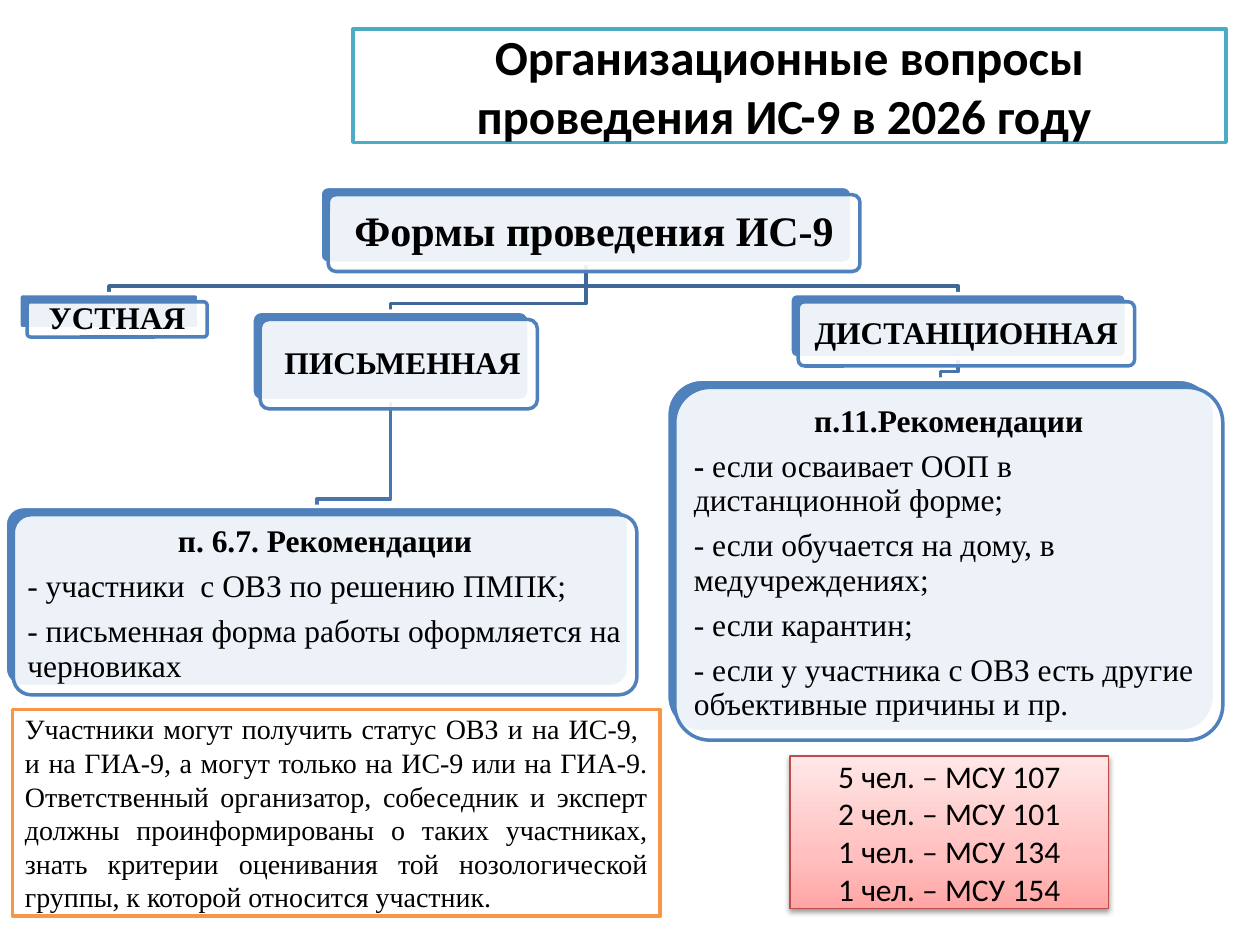
"""Build the slide on the forms of the interview and its organisation."""
from copy import deepcopy

from lxml import etree
from pptx import Presentation
from pptx.dml.color import RGBColor
from pptx.enum import shapes, text
from pptx.oxml import ns
from pptx.util import Inches, Pt

COLORS = {
    "white": "FFFFFF", "black": "000000", "blue": "4F81BD", "teal": "4BACC6",
    "orange": "F79646", "red": "BF4C48", "upper link": "3F6797", "lower link": "4875AC",
}
GRADIENT = [(0, "FFA6A5"), (0.35, "FFC0BF"), (1, "FFE7E7")]
SERIF, SANS = "Times New Roman", "Calibri"
CENTER, LEFT, JUSTIFY = text.PP_ALIGN.CENTER, text.PP_ALIGN.LEFT, text.PP_ALIGN.JUSTIFY
CARD_SHIFT = 0.065
BEND_HEIGHT = 0.06

TITLE = "Организационные вопросы проведения ИС-9 в 2026 году "
CARDS = {
    "forms": ((2.54, 1.48, 4.22, 0.61), "Формы проведения ИС-9", []),
    "oral": ((0.15, 2.33, 1.43, 0.28), "УСТНАЯ", []),
    "written": ((2, 2.47, 2.2, 0.71), " ПИСЬМЕННАЯ", []),
    "written rules": ((0.04, 4.02, 4.95, 1.43), "п. 6.7. Рекомендации", [
        "- участники  с ОВЗ по решению ПМПК;",
        "- письменная форма работы оформляется на черновиках",
    ]),
    "remote": ((6.27, 2.33, 2.67, 0.51), "ДИСТАНЦИОННАЯ", []),
    "remote rules": ((5.29, 3.01, 4.35, 2.8), "п.11.Рекомендации", [
        "- если осваивает ООП в дистанционной форме;",
        "- если обучается на дому, в медучреждениях;",
        "- если карантин;",
        "- если у участника с ОВЗ есть другие объективные причины и пр.",
    ]),
}
LINKS = [
    ("remote", "remote rules", "lower link"), ("forms", "remote", "upper link"),
    ("written", "written rules", "lower link"), ("forms", "written", "upper link"),
    ("forms", "oral", "upper link"),
]
NOTE = (
    "Участники могут получить статус ОВЗ и на ИС-9,  и на ГИА-9, а могут только на ИС-9 "
    "или на ГИА-9. Ответственный организатор, собеседник и эксперт должны проинформированы "
    "о таких участниках, знать критерии оценивания той нозологической группы, к которой "
    "относится участник."
)
COUNTS = ["5 чел. – МСУ 107", "2 чел. – МСУ 101", "1 чел. – МСУ 134", "1 чел. – МСУ 154"]


def color(name):
    return RGBColor.from_string(COLORS[name])


def paint(shape, fill, line, width=2):
    shape.fill.solid()
    shape.fill.fore_color.rgb = color(fill)
    shape.line.color.rgb = color(line)
    shape.line.width = Pt(width)


def write(shape, lines, font, size, align, bold=False):
    frame = shape.text_frame
    frame.word_wrap = True
    frame.auto_size = text.MSO_AUTO_SIZE.NONE
    frame.vertical_anchor = text.MSO_ANCHOR.MIDDLE
    frame.text = "\n".join(lines)
    for paragraph in frame.paragraphs:
        paragraph.alignment = align
        paragraph.font.name = font
        paragraph.font.size = Pt(size)
        paragraph.font.bold = bold
        paragraph.font.color.rgb = color("black")
    return frame


def add_box(slide, kind, box):
    shape = slide.shapes.add_shape(kind, *map(Inches, box))
    shape.shadow.inherit = False
    return shape


def add_card(slide, name):
    (left, top, width, height), heading, items = CARDS[name]
    for shift, fill, line in ((0, "blue", "white"), (CARD_SHIFT, "white", "blue")):
        box = (left + shift, top + shift, width, height)
        card = add_box(slide, shapes.MSO_SHAPE.ROUNDED_RECTANGLE, box)
        card.adjustments[0] = 0.1
        paint(card, fill, line)
    white = card._element.spPr.find(ns.qn("a:solidFill"))[0]
    etree.SubElement(white, ns.qn("a:alpha"), val="90000")

    is_root = name == "forms"
    frame = write(card, [heading, *items], SERIF, 24 if is_root else 18, LEFT)
    margin = Inches(0.1 if is_root else 0.07)
    frame.margin_left = frame.margin_right = margin
    frame.margin_top = frame.margin_bottom = margin
    frame.paragraphs[0].alignment = CENTER
    frame.paragraphs[0].font.bold = True
    for paragraph in frame.paragraphs:
        paragraph.line_spacing = 0.9
        paragraph.space_after = Pt(6.3)
    if name == "remote rules":
        paragraph = frame.paragraphs[1]
        dash, rest = paragraph.text[:2], paragraph.text[2:]
        paragraph.runs[0].text = dash
        paragraph.runs[0].font.bold = True
        paragraph.add_run().text = rest


def add_link(slide, parent, child, line):
    left, top, width, height = CARDS[parent][0]
    start_x, start_y = left + width / 2, top + height
    left, top, width, height = CARDS[child][0]
    end_x, bend_y = left + width / 2, top - BEND_HEIGHT
    points = [(start_x, bend_y), (end_x, bend_y), (end_x, top)]
    builder = slide.shapes.build_freeform(Inches(start_x), Inches(start_y))
    builder.add_line_segments([(Inches(x), Inches(y)) for x, y in points], close=False)
    link = builder.convert_to_shape()
    link.shadow.inherit = False
    link.fill.background()
    link.line.color.rgb = color(line)
    link.line.width = Pt(2)


def add_counts(slide):
    panel = add_box(slide, shapes.MSO_SHAPE.RECTANGLE, (6.27, 6, 2.53, 1.21))
    paint(panel, "white", "red", 0.75)
    panel.fill.gradient()
    panel.fill.gradient_angle = 90
    properties = panel._element.spPr
    stops = properties.find(ns.qn("a:gradFill")).find(ns.qn("a:gsLst"))
    stops.append(deepcopy(stops[0]))
    for stop, (position, value) in zip(panel.fill.gradient_stops, GRADIENT):
        stop.position = position
        stop.color.rgb = RGBColor.from_string(value)
    shadow = etree.SubElement(
        properties.find(ns.qn("a:effectLst")), ns.qn("a:outerShdw"),
        blurRad=str(Pt(3.1)), dist=str(Pt(1.6)), dir="5400000", rotWithShape="0")
    tint = etree.SubElement(shadow, ns.qn("a:srgbClr"), val=COLORS["black"])
    etree.SubElement(tint, ns.qn("a:alpha"), val="38000")
    write(panel, COUNTS, SANS, 18, CENTER)


def main():
    presentation = Presentation()
    presentation.slide_width, presentation.slide_height = Inches(10), Inches(7.5)
    slide = presentation.slides.add_slide(presentation.slide_layouts[5])

    title = slide.shapes.title
    title.left, title.top, title.width, title.height = map(Inches, (2.8, 0.23, 6.93, 0.9))
    paint(title, "white", "teal")
    write(title, [TITLE], SANS, 28, CENTER, bold=True)

    for link in LINKS:
        add_link(slide, *link)
    for name in CARDS:
        add_card(slide, name)

    note = add_box(slide, shapes.MSO_SHAPE.RECTANGLE, (0.1, 5.63, 5.14, 1.64))
    paint(note, "white", "orange")
    write(note, [NOTE], SERIF, 16, JUSTIFY)
    add_counts(slide)
    presentation.save("out.pptx")


if __name__ == "__main__":
    main()
